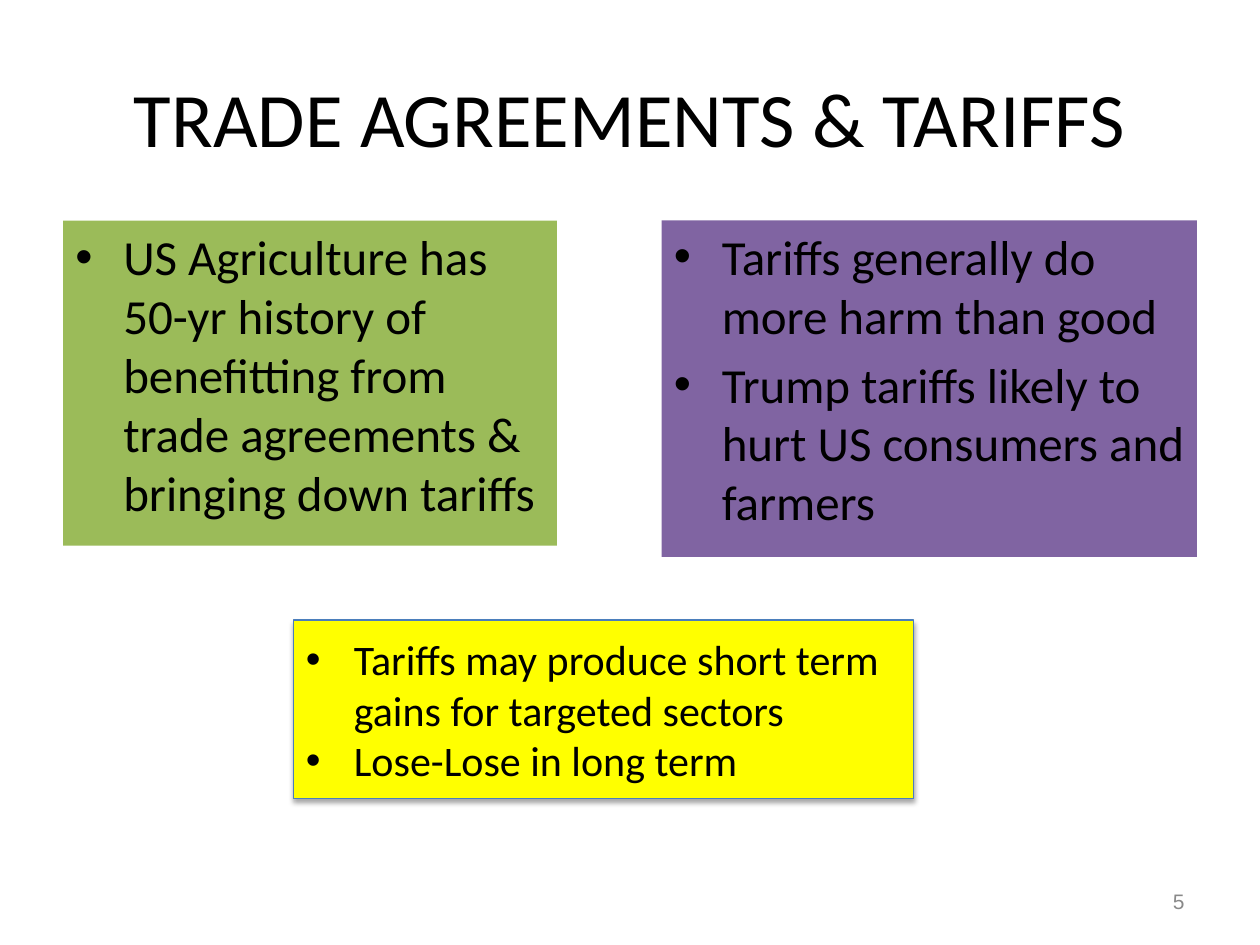
from lxml import etree
from pptx import Presentation
from pptx import util as u
from pptx.dml.color import RGBColor
from pptx.enum import shapes, text
from pptx.oxml import ns

COLORS = {
    "text": "000000",
    "number": "898989",
    "green": "9BBB59",
    "purple": "8064A2",
    "yellow": "FFFF00",
    "border": "4B7EBC",
}


def place(shape, left, top, width, height):
    """Set the position and size of a shape in inches."""
    shape.left, shape.top = u.Inches(left), u.Inches(top)
    shape.width, shape.height = u.Inches(width), u.Inches(height)


def add_run(paragraph, wording, size, color="text", font="Calibri"):
    """Add one formatted run to a paragraph."""
    run = paragraph.add_run()
    run.text = wording
    run.font.name = font
    run.font.size = u.Pt(size)
    run.font.color.rgb = RGBColor.from_string(COLORS[color])


def add_bullet(paragraph):
    """Give a paragraph a round bullet with a hanging indent."""
    properties = paragraph._p.get_or_add_pPr()
    indent = u.Inches(0.38)
    properties.set("marL", str(indent))
    properties.set("indent", str(-indent))
    etree.SubElement(properties, ns.qn("a:buFont"), typeface="Arial")
    etree.SubElement(properties, ns.qn("a:buChar"), char="•")


def add_shadow(shape):
    """Put a soft shadow under a shape."""
    effects = shape._element.spPr.find(ns.qn("a:effectLst"))
    shadow = etree.SubElement(
        effects, ns.qn("a:outerShdw"), blurRad=str(u.Pt(3.1)),
        dist=str(u.Pt(1.8)), dir="5400000", rotWithShape="0")
    color = etree.SubElement(shadow, ns.qn("a:srgbClr"), val=COLORS["text"])
    etree.SubElement(color, ns.qn("a:alpha"), val="35000")


def add_title(slide, wording):
    """Fill and place the title placeholder."""
    title = slide.shapes.title
    place(title, 0.5, 0.3, 9, 1.25)
    title.text_frame.vertical_anchor = text.MSO_ANCHOR.MIDDLE
    paragraph = title.text_frame.paragraphs[0]
    paragraph.alignment = text.PP_ALIGN.CENTER
    add_run(paragraph, wording, 44)


def add_panel(slide, box, fill, points, size, gap=0, anchor=text.MSO_ANCHOR.TOP):
    """Add a filled rectangle holding a bulleted list."""
    panel = slide.shapes.add_shape(
        shapes.MSO_SHAPE.RECTANGLE, *(u.Inches(length) for length in box))
    panel.shadow.inherit = False
    panel.fill.solid()
    panel.fill.fore_color.rgb = RGBColor.from_string(COLORS[fill])
    panel.line.fill.background()
    frame = panel.text_frame
    frame.word_wrap = True
    frame.vertical_anchor = anchor
    for index, point in enumerate(points):
        paragraph = frame.add_paragraph() if index else frame.paragraphs[0]
        paragraph.alignment = text.PP_ALIGN.LEFT
        paragraph.space_before = u.Pt(gap if index else 0)
        add_bullet(paragraph)
        add_run(paragraph, point, size)
    return panel


def add_slide_number(slide, number):
    """Add the slide number at the bottom right."""
    box = slide.shapes.add_textbox(
        u.Inches(7.17), u.Inches(6.95), u.Inches(2.33), u.Inches(0.4))
    frame = box.text_frame
    frame.word_wrap = True
    frame.vertical_anchor = text.MSO_ANCHOR.MIDDLE
    paragraph = frame.paragraphs[0]
    paragraph.alignment = text.PP_ALIGN.RIGHT
    add_run(paragraph, number, 12, "number", "Arial")


def main():
    """Build the slide and save it."""
    presentation = Presentation()
    presentation.slide_width = u.Inches(10)
    presentation.slide_height = u.Inches(7.5)
    slide = presentation.slides.add_slide(presentation.slide_layouts[5])
    add_title(slide, "TRADE AGREEMENTS & TARIFFS")
    add_panel(slide, (0.5, 1.75, 3.92, 2.58), "green", [
        "US Agriculture has 50-yr history of benefitting from "
        "trade agreements & bringing down tariffs",
    ], 28)
    add_panel(slide, (5.25, 1.75, 4.25, 2.67), "purple", [
        "Tariffs generally do more harm than good",
        "Trump tariffs likely to hurt US consumers and farmers",
    ], 28, gap=5.6)
    add_slide_number(slide, "5")
    conclusion = add_panel(slide, (2.33, 4.92, 4.92, 1.42), "yellow", [
        "Tariffs may produce short term gains for targeted sectors",
        "Lose-Lose in long term",
    ], 24, anchor=text.MSO_ANCHOR.MIDDLE)
    conclusion.line.color.rgb = RGBColor.from_string(COLORS["border"])
    conclusion.line.width = u.Pt(0.75)
    add_shadow(conclusion)
    presentation.save("out.pptx")


if __name__ == "__main__":
    main()
